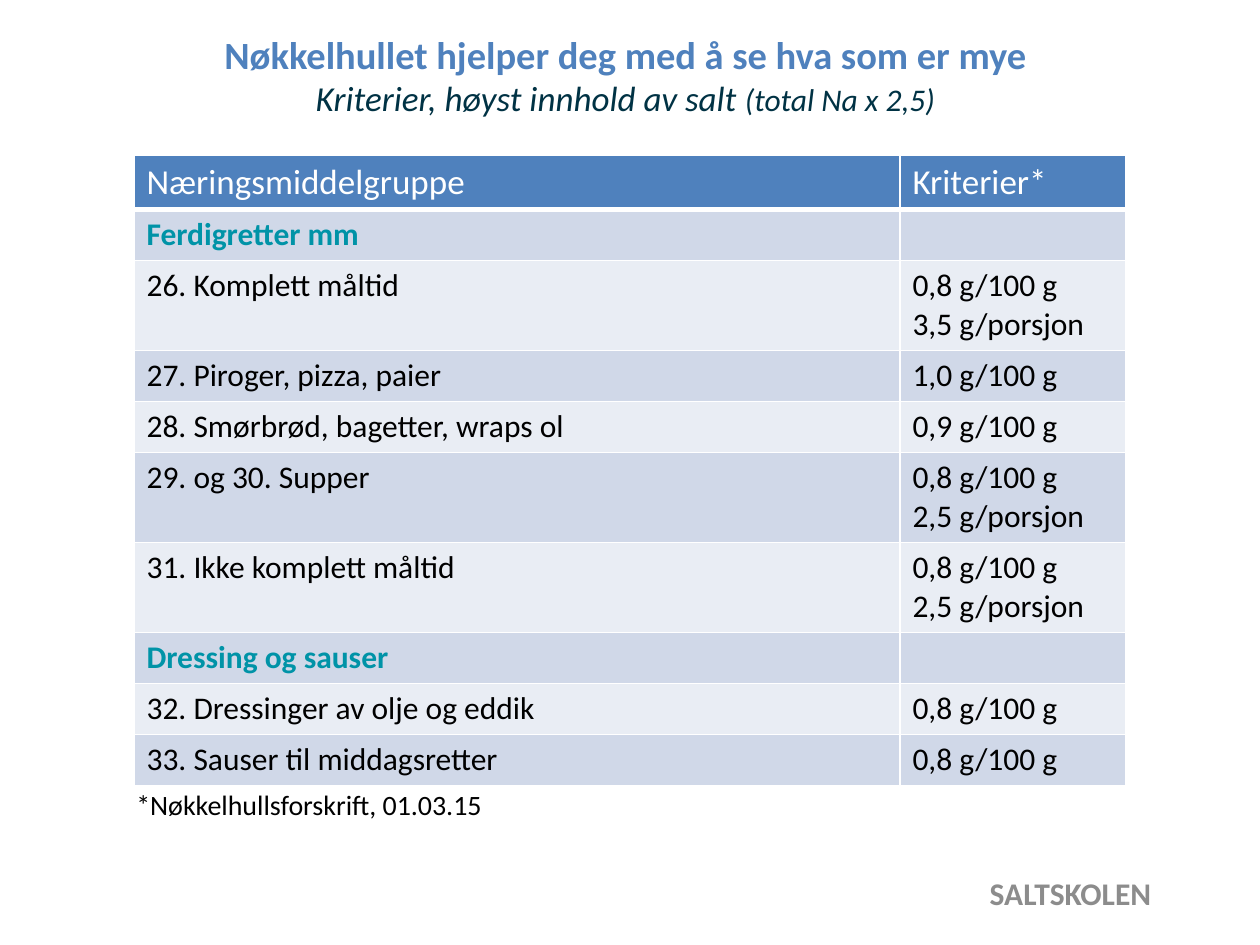
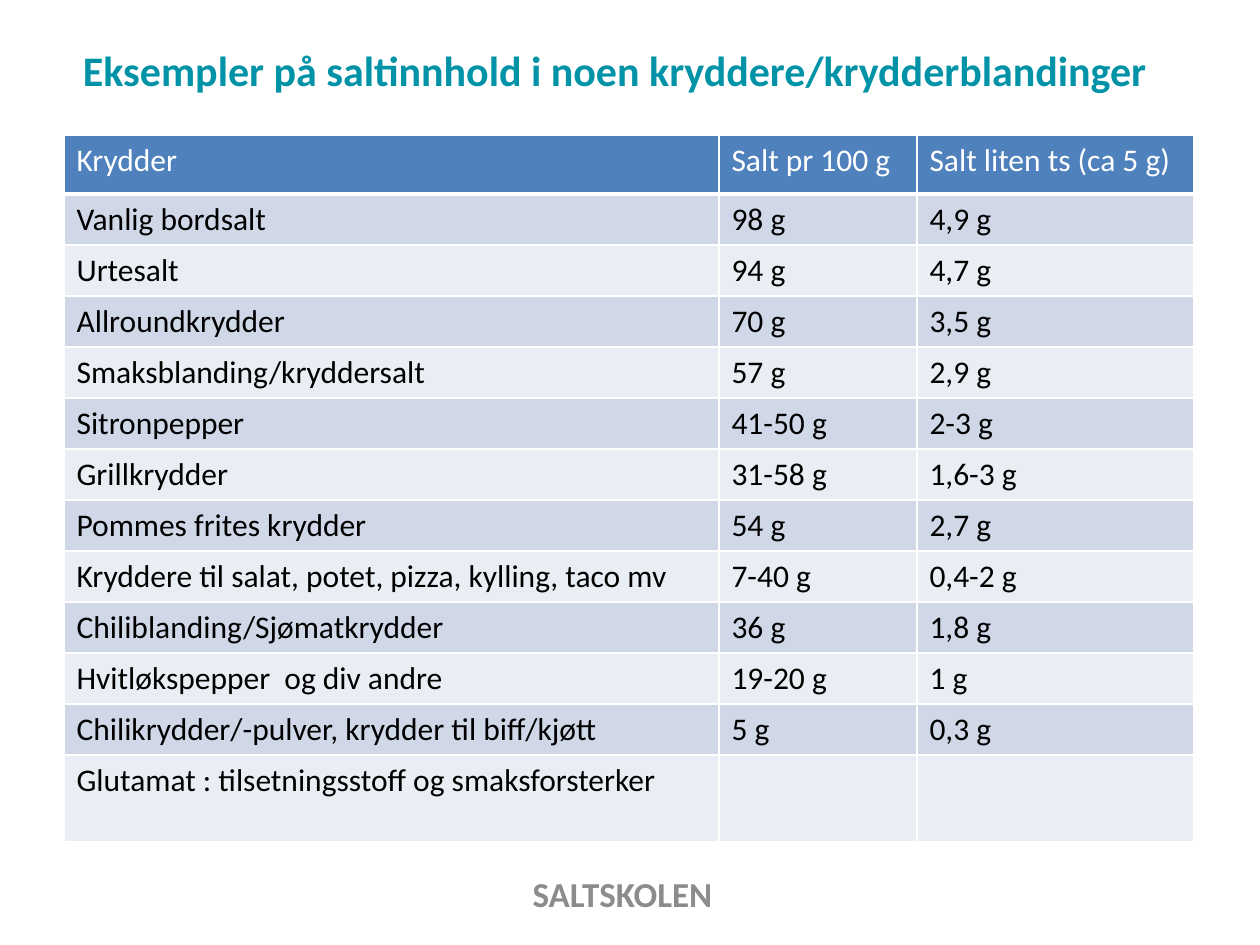
from lxml import etree
from pptx import Presentation
from pptx.dml.color import RGBColor
from pptx.enum.text import MSO_ANCHOR, PP_ALIGN
from pptx.oxml.ns import qn
from pptx.util import Emu, Pt

PX = 914400 // 126
SLIDE_W, SLIDE_H = 1260, 945
FONT = "Calibri"
BLUE, TEAL, NAVY, GREY = "4F81BD", "0093A7", "003244", "8C8C8C"
BLACK, WHITE = "000000", "FFFFFF"
BANDS = ("D0D8E8", "E9EDF4")
LEFT, CENTER = PP_ALIGN.LEFT, PP_ALIGN.CENTER
TOP, MIDDLE, BOTTOM = MSO_ANCHOR.TOP, MSO_ANCHOR.MIDDLE, MSO_ANCHOR.BOTTOM
ROW_H, EXTRA_LINE_H = 51, 39

CRITERIA = [
    ("Næringsmiddelgruppe", "Kriterier*"),
    ("Ferdigretter mm", ""),
    ("26. Komplett måltid", "0,8 g/100 g\n3,5 g/porsjon"),
    ("27. Piroger, pizza, paier", "1,0 g/100 g"),
    ("28. Smørbrød, bagetter, wraps ol", "0,9 g/100 g"),
    ("29. og 30. Supper", "0,8 g/100 g\n2,5 g/porsjon"),
    ("31. Ikke komplett måltid", "0,8 g/100 g\n2,5 g/porsjon"),
    ("Dressing og sauser", ""),
    ("32. Dressinger av olje og eddik", "0,8 g/100 g"),
    ("33. Sauser til middagsretter", "0,8 g/100 g"),
]
CRITERIA_GROUPS = ("Ferdigretter mm", "Dressing og sauser")

SPICES = [
    ("Krydder", "Salt pr 100 g", "Salt liten ts (ca 5 g)"),
    ("Vanlig bordsalt", "98 g", "4,9 g"),
    ("Urtesalt", "94 g", "4,7 g"),
    ("Allroundkrydder", "70 g", "3,5 g"),
    ("Smaksblanding/kryddersalt", "57 g", "2,9 g"),
    ("Sitronpepper", "41-50 g", "2-3 g"),
    ("Grillkrydder", "31-58 g", "1,6-3 g"),
    ("Pommes frites krydder", "54 g", "2,7 g"),
    ("Kryddere til salat, potet, pizza, kylling, taco mv", "7-40 g", "0,4-2 g"),
    ("Chiliblanding/Sjømatkrydder", "36 g", "1,8 g"),
    ("Hvitløkspepper  og div andre", "19-20 g", "1 g"),
    ("Chilikrydder/-pulver, krydder til biff/kjøtt", "5 g", "0,3 g"),
    ("Glutamat : tilsetningsstoff og smaksforsterker", "", ""),
]


def px(length):
    return Emu(length * PX)


def color(value):
    return RGBColor.from_string(value)


def add_run(paragraph, text, size, ink, bold=False, italic=False):
    run = paragraph.add_run()
    run.text = text
    font = run.font
    font.name, font.size = FONT, Pt(size)
    font.bold, font.italic = bold, italic
    font.color.rgb = color(ink)


def write(frame, lines, align=LEFT):
    for index, runs in enumerate(lines):
        paragraph = frame.add_paragraph() if index else frame.paragraphs[0]
        paragraph.alignment = align
        for run in runs:
            add_run(paragraph, *run)


def add_text(slide, box, lines, align=CENTER, anchor=MIDDLE):
    frame = slide.shapes.add_textbox(*map(px, box)).text_frame
    frame.word_wrap = True
    frame.vertical_anchor = anchor
    write(frame, lines, align)


def add_footer(slide, box, size):
    add_text(slide, box, [[("SALTSKOLEN", size, GREY, True)]])


def add_borders(cell, bottom_width):
    properties = cell._tc.get_or_add_tcPr()
    for side, width in (("L", 1), ("R", 1), ("T", 1), ("B", bottom_width)):
        line = etree.SubElement(properties, qn(f"a:ln{side}"), w=str(Pt(width)))
        fill = etree.SubElement(line, qn("a:solidFill"))
        etree.SubElement(fill, qn("a:srgbClr"), val=WHITE)


def add_salt_table(slide, left, top, widths, heights, rows, header_size, groups=()):
    table = slide.shapes.add_table(
        len(rows), len(widths), px(left), px(top), px(sum(widths)), px(sum(heights))
    ).table
    for column, width in zip(table.columns, widths):
        column.width = px(width)
    for r, (row, height) in enumerate(zip(rows, heights)):
        table.rows[r].height = px(height)
        header, group = r == 0, row[0] in groups
        ink = WHITE if header else TEAL if group else BLACK
        size = header_size if header else 18
        for c, text in enumerate(row):
            cell = table.cell(r, c)
            add_borders(cell, 3 if header else 1)
            cell.fill.solid()
            cell.fill.fore_color.rgb = color(BLUE if header else BANDS[(r - 1) % 2])
            if text:
                write(cell.text_frame,
                      [[(line, size, ink, group)] for line in text.split("\n")])


def build_criteria_slide(slide):
    add_text(slide, (20, 23, 1211, 102), [
        [("Nøkkelhullet hjelper deg med å se hva som er mye", 22, BLUE, True)],
        [("Kriterier, høyst innhold av salt ", 20, NAVY, False, True),
         ("(total Na x 2,5)", 18, NAVY, False, True)],
    ], anchor=BOTTOM)
    heights = [54] + [
        ROW_H + EXTRA_LINE_H * limit.count("\n") for _, limit in CRITERIA[1:]
    ]
    add_salt_table(slide, 134, 155, (766, 226), heights, CRITERIA, 20, CRITERIA_GROUPS)
    add_text(slide, (124, 781, 467, 47),
             [[("*Nøkkelhullsforskrift, 01.03.15", 16, BLACK)]], LEFT, TOP)
    add_footer(slide, (922, 878, 297, 30), 18)


def build_spice_slide(slide):
    add_text(slide, (35, 37, 1160, 66), [
        [("Eksempler på saltinnhold i noen kryddere/krydderblandinger", 24, TEAL, True)],
    ])
    heights = [59] + [ROW_H] * (len(SPICES) - 2) + [87]
    add_salt_table(slide, 64, 135, (655, 198, 277), heights, SPICES, 18)
    add_footer(slide, (423, 869, 399, 50), 20)


def main():
    deck = Presentation()
    deck.slide_width, deck.slide_height = px(SLIDE_W), px(SLIDE_H)
    blank = deck.slide_layouts[6]
    for build in (build_criteria_slide, build_spice_slide):
        build(deck.slides.add_slide(blank))
    deck.save("out.pptx")


if __name__ == "__main__":
    main()
